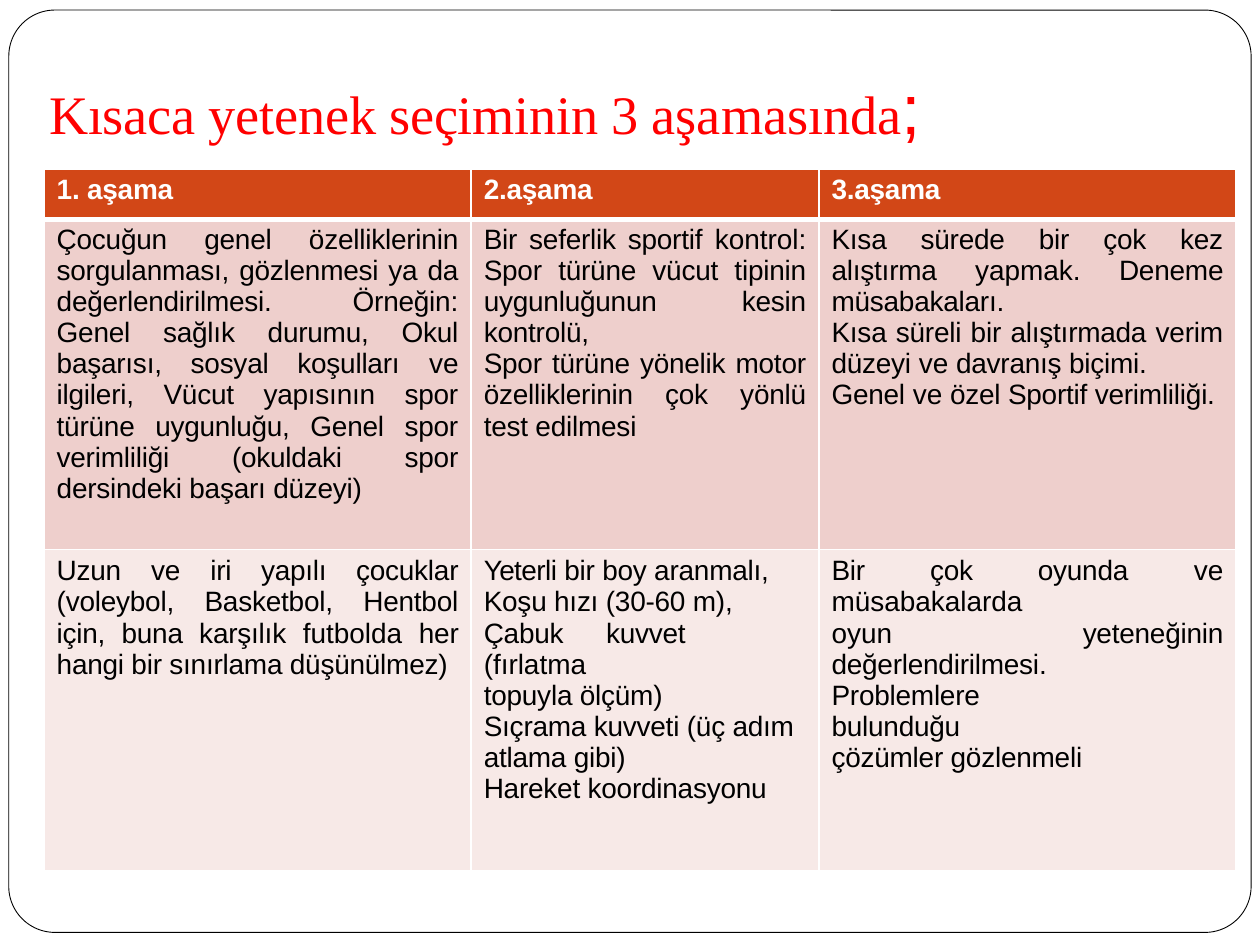
from lxml import etree
from pptx import Presentation
from pptx.dml.color import RGBColor
from pptx.enum.shapes import MSO_SHAPE
from pptx.enum.text import MSO_ANCHOR, MSO_AUTO_SIZE, PP_ALIGN
from pptx.oxml.ns import qn
from pptx.util import Inches, Pt

ROUNDED = MSO_SHAPE.ROUNDED_RECTANGLE
TOP = MSO_ANCHOR.TOP
GROW = MSO_AUTO_SIZE.SHAPE_TO_FIT_TEXT
LEFT, JUSTIFY = PP_ALIGN.LEFT, PP_ALIGN.JUSTIFY
COLORS = {
    "title": "FF0000", "ink": "000000", "white": "FFFFFF",
    "header": "D24717", "selection": "EECFCC", "criteria": "F7E9E7",
}
TIGHT = -0.1


def add_run(paragraph, text, size, color, font="Arial", bold=False, spacing=0):
    run = paragraph.add_run()
    run.text = text
    run.font.name = font
    run.font.size = Pt(size)
    run.font.bold = bold
    run.font.color.rgb = RGBColor.from_string(COLORS[color])
    run.font._element.set("spc", str(round(spacing * 100)))


def add_border(cell, side, width):
    line = etree.SubElement(cell._tc.get_or_add_tcPr(), qn(f"a:ln{side}"), w=str(Pt(width)))
    fill = etree.SubElement(line, qn("a:solidFill"))
    etree.SubElement(fill, qn("a:srgbClr"), val=COLORS["white"])


prs = Presentation()
prs.slide_width, prs.slide_height = Inches(10), Inches(7.5)
slide = prs.slides.add_slide(prs.slide_layouts[5])

frame = slide.shapes.add_shape(ROUNDED, Inches(0.07), Inches(0.08), Inches(9.86), Inches(7.32))
frame.adjustments[0] = 0.05
frame.shadow.inherit = False
frame.fill.background()
frame.line.color.rgb = RGBColor.from_string(COLORS["ink"])
frame.line.width = Pt(0.5)

title = slide.shapes.title
title.left, title.top = Inches(0.39), Inches(0.5)
title.width, title.height = Inches(7), Inches(0.69)
heading = title.text_frame
heading.margin_left = heading.margin_right = heading.margin_bottom = 0
heading.margin_top = Inches(0.01)
heading.vertical_anchor = TOP
heading.word_wrap = True
heading.auto_size = GROW
heading.paragraphs[0].alignment = LEFT
heading.paragraphs[0].space_before = Pt(0.9)
for text, size, font, spacing in [
    ("Kısaca yetenek seçiminin 3 ", 31, "Times New Roman", TIGHT),
    ("aşamasında", 31, "Times New Roman", 0),
    (";", 40, "Arial", 0),
]:
    add_run(heading.paragraphs[0], text, size, "title", font, spacing=spacing)

header = [[[[("1. aşama", TIGHT)]], [[("2.aşama", TIGHT)]], [[("3.aşama", TIGHT)]]]]
body = [
    [
        [[("Çocuğun genel özelliklerinin sorgulanması, gözlenmesi ya da "
           "değerlendirilmesi. Örneğin: Genel sağlık durumu, Okul "
           "başarısı, sosyal koşulları", TIGHT),
          (" ve ", 0),
          ("ilgileri, Vücut yapısının spor türüne uygunluğu, Genel spor "
           "verimliliği (okuldaki spor dersindeki başarı düzeyi)", TIGHT)]],
        [[("Bir seferlik sportif ", TIGHT), ("kontrol: ", 0),
          ("Spor türüne vücut tipinin uygunluğunun kesin kontrolü,", TIGHT)],
         [("Spor türüne yönelik motor özelliklerinin çok yönlü test edilmesi", TIGHT)]],
        [[("Kısa sürede bir çok kez alıştırma", TIGHT), (" yapmak. ", 0),
          ("Deneme müsabakaları.", TIGHT)],
         [("Kısa süreli bir alıştırmada verim düzeyi ", TIGHT), ("ve ", 0),
          ("davranış biçimi.", TIGHT)],
         [("Genel ", TIGHT), ("ve ", 0), ("özel Sportif verimliliği.", TIGHT)]],
    ],
    [
        [[("Uzun", TIGHT), (" ve ", 0),
          ("iri yapılı çocuklar (voleybol, Basketbol, Hentbol için, buna karşılık ", TIGHT),
          ("futbolda ", 0), ("her hangi bir sınırlama düşünülmez)", TIGHT)]],
        [[("Yeterli ", -0.3), ("bir boy aranmalı, Koşu hızı (30-60 m),", TIGHT)],
         [("Çabuk\tkuvvet\t", TIGHT), ("(fırlatma", 0)],
         [("topuyla ölçüm)", TIGHT)],
         [("Sıçrama kuvveti (üç adım atlama gibi)", TIGHT)],
         [("Hareket koordinasyonu", TIGHT)]],
        [[("Bir çok oyunda", TIGHT), (" ve müsabakalarda\toyun ", 0),
          ("yeteneğinin değerlendirilmesi.", TIGHT)],
         [("Problemlere\tbulunduğu", TIGHT)],
         [("çözümler gözlenmeli", TIGHT)]],
    ],
]
tab_stops = {(2, 1, 1): [0.97, 1.84], (2, 2, 0): [2.72], (2, 2, 1): [2.17]}
row_fills = ["header", "selection", "criteria"]
row_borders = [{"T": 1, "B": 3}, {"T": 3, "B": 1}, {"T": 1, "B": 1}]

stages = slide.shapes.add_table(
    3, 3, Inches(0.35), Inches(1.34), Inches(9.46), Inches(5.57)).table
stages.horz_banding = False
for column, width in zip(stages.columns, [3.39, 2.76, 3.31]):
    column.width = Inches(width)
for row, height in zip(stages.rows, [0.4, 2.62, 2.55]):
    row.height = Inches(height)

for r, stage_row in enumerate(header + body):
    for c, paragraphs in enumerate(stage_row):
        cell = stages.cell(r, c)
        cell.margin_left = cell.margin_right = cell.margin_bottom = 0
        cell.margin_top = Inches(0.05 if r == 2 else 0.04)
        cell.vertical_anchor = TOP
        for side, width in ({"L": 1, "R": 1} | row_borders[r]).items():
            add_border(cell, side, width)
        cell.fill.solid()
        cell.fill.fore_color.rgb = RGBColor.from_string(COLORS[row_fills[r]])
        for p, runs in enumerate(paragraphs):
            paragraph = cell.text_frame.paragraphs[0] if p == 0 else cell.text_frame.add_paragraph()
            paragraph.alignment = LEFT if r == 0 or (r, c) == (2, 1) else JUSTIFY
            paragraph.space_before = Pt(3.2 if p == 0 else 0)
            properties = paragraph._p.get_or_add_pPr()
            properties.set("marL", str(Inches(0.1)))
            properties.set("marR", str(Inches(0.1)))
            if (r, c, p) in tab_stops:
                stops = etree.SubElement(properties, qn("a:tabLst"))
                for position in tab_stops[r, c, p]:
                    etree.SubElement(stops, qn("a:tab"), pos=str(Inches(position)), algn="l")
            for text, spacing in runs:
                add_run(paragraph, text, 16, "white" if r == 0 else "ink",
                        bold=r == 0, spacing=spacing)

prs.save("out.pptx")
